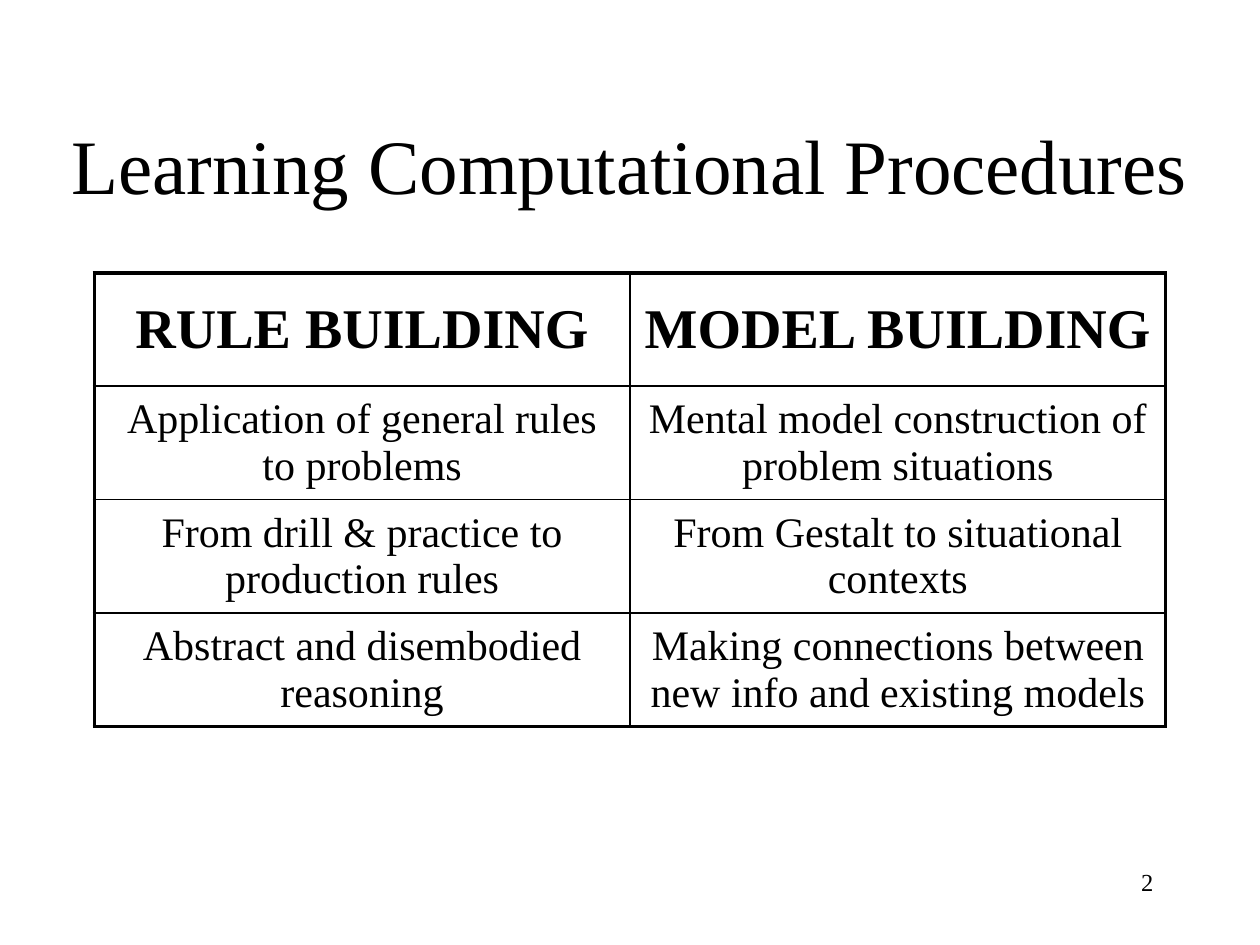
from lxml import etree
from pptx import Presentation
from pptx import util as u
from pptx.dml.color import RGBColor
from pptx.enum import text
from pptx.oxml import ns

COLORS = {"ink": "000000", "paper": "FFFFFF"}
ROWS = [
    ("RULE BUILDING", "MODEL BUILDING"),
    ("Application of general rules to problems",
     "Mental model construction of problem situations"),
    ("From drill & practice to production rules",
     "From Gestalt to situational contexts"),
    ("Abstract and disembodied reasoning",
     "Making connections between new info and existing models"),
]


class Deck:
    """Holds the style and the current slide, with a method per element."""

    font = "Times New Roman"
    thin, thick = 1, 2.25

    def __init__(self, prs):
        self.s = prs.slides.add_slide(prs.slide_layouts[5])
        fill = self.s.background.fill
        fill.solid()
        fill.fore_color.rgb = RGBColor.from_string(COLORS["paper"])

    def add_text(self, tf, words, size, align, bold=False):
        tf.word_wrap = True
        p = tf.paragraphs[0]
        p.alignment = align
        r = p.add_run()
        r.text = words
        r.font.name = self.font
        r.font.size = u.Pt(size)
        r.font.bold = bold
        r.font.color.rgb = RGBColor.from_string(COLORS["ink"])
        return p

    def title(self, words, x, y, w, h):
        sp = self.s.shapes.title
        sp.left, sp.top, sp.width, sp.height = map(u.Cm, (x, y, w, h))
        tf = sp.text_frame
        tf.auto_size = text.MSO_AUTO_SIZE.NONE
        tf.vertical_anchor = text.MSO_ANCHOR.MIDDLE
        self.add_text(tf, words, 44, text.PP_ALIGN.CENTER)

    def number(self, words, x, y, w, h):
        sp = self.s.shapes.add_textbox(*map(u.Cm, (x, y, w, h)))
        self.add_text(sp.text_frame, words, 14, text.PP_ALIGN.RIGHT)

    def border(self, cell, sides):
        tcPr = cell._tc.get_or_add_tcPr()
        for i, (side, outer) in enumerate(sides.items()):
            width = u.Pt(self.thick if outer else self.thin)
            ln = etree.Element(ns.qn(f"a:ln{side}"), w=str(int(width)))
            fill = etree.SubElement(ln, ns.qn("a:solidFill"))
            etree.SubElement(fill, ns.qn("a:srgbClr"), val=COLORS["ink"])
            tcPr.insert(i, ln)

    def table(self, rows, x, y, w, h):
        last_row, last_col = len(rows) - 1, len(rows[0]) - 1
        tbl = self.s.shapes.add_table(
            len(rows), len(rows[0]), *map(u.Cm, (x, y, w, h))).table
        tbl.horz_banding = False
        for i, row in enumerate(rows):
            size = 24 if i else 32
            for j, words in enumerate(row):
                cell = tbl.cell(i, j)
                cell.fill.background()
                cell.vertical_anchor = text.MSO_ANCHOR.MIDDLE
                p = self.add_text(cell.text_frame, words, size,
                                  text.PP_ALIGN.CENTER, bold=i == 0)
                p.space_before = u.Pt(size * 0.2)
                self.border(cell, {"L": j == 0, "R": j == last_col,
                                   "T": i == 0, "B": i == last_row})


def main():
    prs = Presentation()
    prs.slide_width, prs.slide_height = u.Cm(25.4), u.Cm(19.05)
    deck = Deck(prs)
    deck.number("2", 18.2, 17.35, 5.3, 1.27)
    deck.title("Learning Computational Procedures", 0, 1.7, 25.4, 3.18)
    deck.table(ROWS, 1.9, 5.5, 21.6, 9.14)
    prs.save("out.pptx")


if __name__ == "__main__":
    main()
